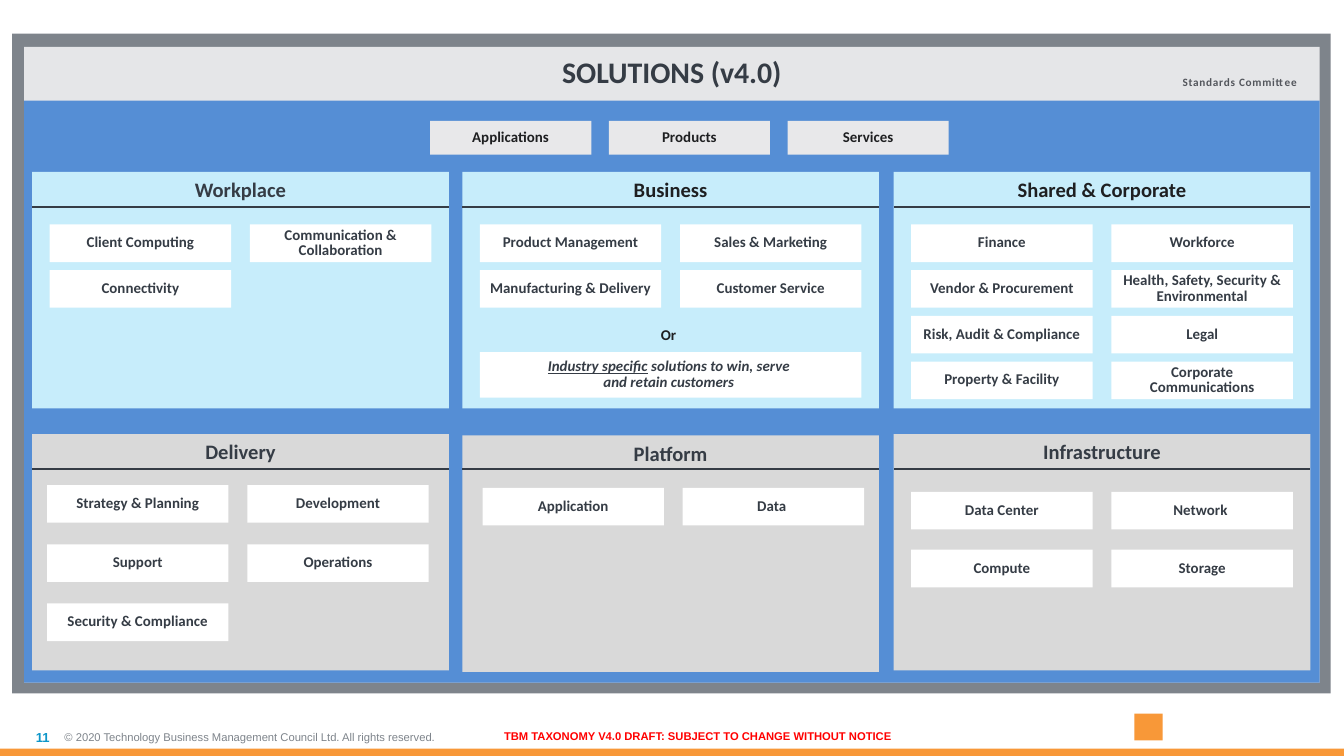
from dataclasses import dataclass

from pptx import Presentation
from pptx.dml.color import RGBColor
from pptx.enum.shapes import MSO_CONNECTOR, MSO_SHAPE
from pptx.enum.text import MSO_ANCHOR, PP_ALIGN
from pptx.oxml.ns import qn
from pptx.shapes.autoshape import Shape
from pptx.slide import Slide
from pptx.util import Inches, Pt

INK = RGBColor(0x35, 0x3C, 0x45)
BLACK = RGBColor(0x1E, 0x1F, 0x21)
SLATE = RGBColor(0x7E, 0x84, 0x8B)
COMMITTEE_GRAY = RGBColor(0x53, 0x56, 0x5C)
TITLE_GRAY = RGBColor(0xE5, 0xE6, 0xE8)
TAG_GRAY = RGBColor(0xE8, 0xE8, 0xEA)
PANEL_GRAY = RGBColor(0xD9, 0xD9, 0xD9)
PANEL_CYAN = RGBColor(0xC7, 0xED, 0xFB)
BLUE = RGBColor(0x55, 0x8E, 0xD5)
NUMBER_BLUE = RGBColor(0x0D, 0x96, 0xC9)
ORANGE = RGBColor(0xF8, 0x98, 0x38)
RED = RGBColor(0xFF, 0x00, 0x00)
WHITE = RGBColor(0xFF, 0xFF, 0xFF)

PANEL_WIDTH, PANEL_HEIGHT = 3.1, 1.76
CHIP_WIDTH, CHIP_HEIGHT, CHIP_PITCH = 1.35, 0.28, 1.49
TAG_LEFT, TAG_PITCH = 3.2, 1.33


@dataclass(frozen=True)
class Box:
    left: float
    top: float
    width: float
    height: float


@dataclass(frozen=True)
class Span:
    text: str
    size: float = 8
    color: RGBColor = INK
    bold: bool = True
    italic: bool = False
    underline: bool = False
    font: str = "Calibri"
    spacing: float = 0


@dataclass(frozen=True)
class Layout:
    align: PP_ALIGN = PP_ALIGN.CENTER
    anchor: MSO_ANCHOR = MSO_ANCHOR.MIDDLE
    inset_x: float = 0
    inset_y: float = 0
    line_spacing: float = 1
    wrap: bool = True


@dataclass(frozen=True)
class Panel:
    title: str
    left: float
    top: float
    rule_top: float
    fill: RGBColor
    title_color: RGBColor
    chips_left: float
    chips_top: float
    row_pitch: float
    columns: tuple[tuple[str, ...], tuple[str, ...]]


TITLE = Layout(anchor=MSO_ANCHOR.TOP, inset_x=0.1, inset_y=0.05)
HEADING = Layout(anchor=MSO_ANCHOR.TOP, inset_x=0.04, inset_y=0.04)
CHIP = Layout(line_spacing=0.85)
TAG = Layout(inset_x=0.05, inset_y=0.05, line_spacing=0.85, wrap=False)
OR_LABEL = Layout(anchor=MSO_ANCHOR.TOP, inset_x=0.05, inset_y=0.05)
CENTERED = Layout(wrap=False)
LEFT_MIDDLE = Layout(align=PP_ALIGN.LEFT)
RIGHT_MIDDLE = Layout(align=PP_ALIGN.RIGHT)
LEFT_TOP = Layout(align=PP_ALIGN.LEFT, anchor=MSO_ANCHOR.TOP, wrap=False)

PANELS = (
    Panel("Workplace", 0.24, 1.28, 1.54, PANEL_CYAN, INK, 0.37, 1.67, 0.34,
          (("Client Computing", "Connectivity"), ("Communication & Collaboration",))),
    Panel("Business", 3.44, 1.28, 1.54, PANEL_CYAN, BLACK, 3.57, 1.67, 0.34,
          (("Product Management", "Manufacturing & Delivery"),
           ("Sales & Marketing", "Customer Service"))),
    Panel("Shared & Corporate", 6.65, 1.28, 1.54, PANEL_CYAN, BLACK, 6.78, 1.67, 0.34,
          (("Finance", "Vendor & Procurement", "Risk, Audit & Compliance",
            "Property & Facility"),
           ("Workforce", "Health, Safety, Security & Environmental", "Legal",
            "Corporate\nCommunications"))),
    Panel("Delivery", 0.24, 3.23, 3.49, PANEL_GRAY, INK, 0.35, 3.61, 0.44,
          (("Strategy & Planning", "Support", "Security & Compliance"),
           ("Development", "Operations"))),
    Panel("Platform", 3.44, 3.24, 3.49, PANEL_GRAY, INK, 3.59, 3.63, 0.43,
          (("Application",), ("Data ",))),
    Panel("Infrastructure", 6.65, 3.23, 3.49, PANEL_GRAY, INK, 6.78, 3.66, 0.43,
          (("Data Center", "Compute"), ("Network ", "Storage"))),
)


def write(shape: Shape, spans: tuple[Span, ...], layout: Layout) -> None:
    frame = shape.text_frame
    frame.word_wrap = layout.wrap
    frame.vertical_anchor = layout.anchor
    frame.margin_left = frame.margin_right = Inches(layout.inset_x)
    frame.margin_top = frame.margin_bottom = Inches(layout.inset_y)
    paragraph = frame.paragraphs[0]
    paragraph.alignment = layout.align
    paragraph.line_spacing = layout.line_spacing
    for span in spans:
        for index, line in enumerate(span.text.split("\n")):
            if index:
                paragraph.add_line_break()
            run = paragraph.add_run()
            run.text = line
            run.font.name = span.font
            run.font.size = Pt(span.size)
            run.font.bold = span.bold
            run.font.italic = span.italic
            run.font.underline = span.underline
            run.font.color.rgb = span.color
            if span.spacing:
                run.font._rPr.set("spc", str(round(span.spacing * 100)))


def draw_block(slide: Slide, box: Box, fill: RGBColor,
               spans: tuple[Span, ...] = (), layout: Layout = CHIP) -> None:
    block = slide.shapes.add_shape(
        MSO_SHAPE.RECTANGLE, Inches(box.left), Inches(box.top),
        Inches(box.width), Inches(box.height))
    block.shadow.inherit = False
    block.fill.solid()
    block.fill.fore_color.rgb = fill
    block.line.fill.background()
    if spans:
        write(block, spans, layout)


def draw_label(slide: Slide, box: Box, span: Span, layout: Layout) -> None:
    label = slide.shapes.add_textbox(
        Inches(box.left), Inches(box.top), Inches(box.width), Inches(box.height))
    write(label, (span,), layout)


def draw_rule(slide: Slide, left: float, top: float) -> None:
    rule = slide.shapes.add_connector(
        MSO_CONNECTOR.STRAIGHT, Inches(left), Inches(top),
        Inches(left + PANEL_WIDTH), Inches(top))
    rule.line.color.rgb = INK
    rule.line.width = Pt(1)
    properties = rule._element.spPr
    properties.append(properties.makeelement(qn("a:effectLst"), {}))


def draw_panel(slide: Slide, panel: Panel) -> None:
    draw_block(slide, Box(panel.left, panel.top, PANEL_WIDTH, PANEL_HEIGHT), panel.fill,
               (Span(panel.title, size=11, color=panel.title_color),), HEADING)
    draw_rule(slide, panel.left, panel.rule_top)
    for column, names in enumerate(panel.columns):
        for row, name in enumerate(names):
            box = Box(panel.chips_left + column * CHIP_PITCH,
                      panel.chips_top + row * panel.row_pitch, CHIP_WIDTH, CHIP_HEIGHT)
            draw_block(slide, box, WHITE, (Span(name),))


def draw_footer(slide: Slide) -> None:
    draw_label(slide, Box(0.48, 5.34, 3.36, 0.29),
               Span("© 2020 Technology Business Management Council Ltd. All rights reserved.",
                    size=6, color=SLATE, bold=False, font="Arial"), LEFT_MIDDLE)
    draw_label(slide, Box(0, 5.34, 0.37, 0.29),
               Span("11", size=7, color=NUMBER_BLUE, font="Arial"), RIGHT_MIDDLE)
    draw_block(slide, Box(8.44, 5.31, 0.21, 0.2), ORANGE)
    draw_block(slide, Box(0, 5.57, 10, 0.06), ORANGE)
    draw_label(slide, Box(3.73, 5.43, 2.92, 0.1),
               Span("TBM TAXONOMY V4.0 DRAFT: SUBJECT TO CHANGE WITHOUT NOTICE",
                    size=6, color=RED, font="Arial"), CENTERED)


def main() -> None:
    presentation = Presentation()
    presentation.slide_width = Inches(10)
    presentation.slide_height = presentation.slide_width * 9 // 16
    slide = presentation.slides.add_slide(presentation.slide_layouts[6])

    draw_footer(slide)
    draw_block(slide, Box(0.09, 0.25, 9.81, 4.91), SLATE)
    draw_block(slide, Box(0.18, 0.35, 9.64, 4.73), TITLE_GRAY,
               (Span("SOLUTIONS (v4.0)", size=16),), TITLE)
    draw_block(slide, Box(0.18, 0.75, 9.64, 4.33), BLUE)
    draw_label(slide, Box(8.8, 0.56, 0.87, 0.1),
               Span("Standards Committee", size=6, color=COMMITTEE_GRAY, spacing=0.4), LEFT_TOP)

    for panel in PANELS:
        draw_panel(slide, panel)
    draw_label(slide, Box(4.74, 2.37, 0.47, 0.26), Span("Or", color=BLACK), OR_LABEL)
    draw_block(slide, Box(3.57, 2.62, 2.84, 0.34), WHITE,
               (Span("Industry specific", italic=True, underline=True),
                Span(" solutions to win, serve \nand retain customers ", italic=True)))
    for index, name in enumerate(("Applications", "Products", "Services")):
        draw_block(slide, Box(TAG_LEFT + index * TAG_PITCH, 0.9, 1.2, 0.25), TAG_GRAY,
                   (Span(name, color=BLACK),), TAG)

    presentation.save("out.pptx")


if __name__ == "__main__":
    main()
